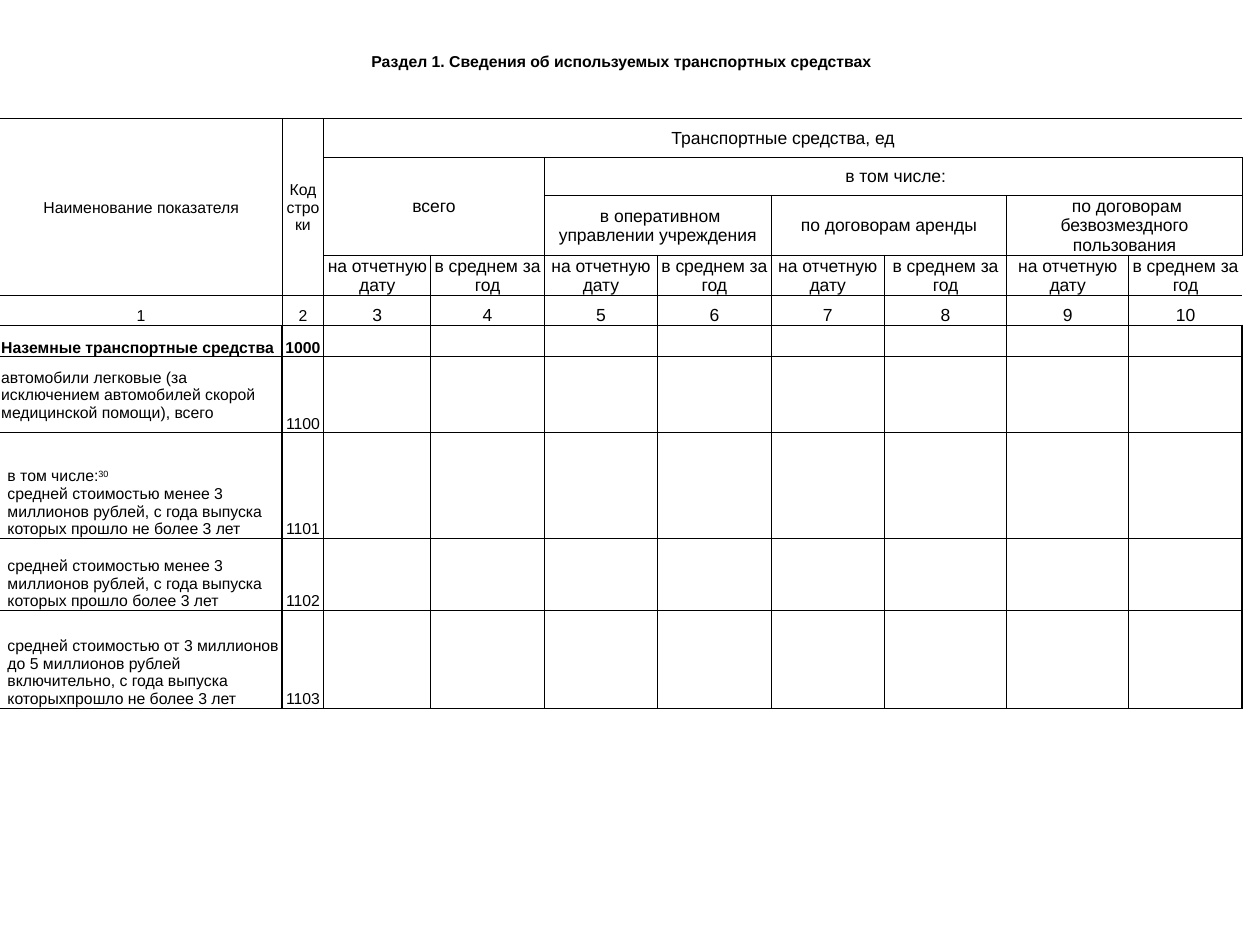
from lxml.etree import SubElement
from pptx import Presentation
from pptx.dml.color import RGBColor as RGB
from pptx.enum.text import MSO_ANCHOR as ANCHOR, PP_ALIGN as ALIGN
from pptx.oxml.ns import qn
from pptx.util import Pt

COLS = [120.24, 41.04, 23.76, 61.2] + [64.8] * 4 + [69.84] * 2 + [64.8]
ROWS = [28.8, 18, 22.3, 21.6, 22.3, 22.3, 17.1, 18, 43.4, 60.3, 41, 56]
NUMBERS, BODY, LAST = 6, 7, len(COLS)
PLAIN_STYLE = "{2D5ABB26-0587-4C30-8999-92F81FD0307C}"


def color(hex_string):
    return RGB.from_string(hex_string)


class Deck:
    font, ink, paper = "Arial", "000000", "FFFFFF"

    def __init__(self, prs):
        self.s = prs.slides.add_slide(prs.slide_layouts[6])

    def table(self, x, y, cols, rows):
        frame = self.s.shapes.add_table(len(rows), len(cols), Pt(x), Pt(y),
                                        Pt(sum(cols)), Pt(sum(rows)))
        table = frame.table
        table.first_row = table.horz_banding = False
        table._tbl.tblPr.find(qn("a:tableStyleId")).text = PLAIN_STYLE
        for col, width in zip(table.columns, cols):
            col.width = Pt(width)
        for row, height in zip(table.rows, rows):
            row.height = Pt(height)
        return table

    def cell(self, cell, borders, runs=(), size=9, bold=False,
             align=ALIGN.CENTER, anchor=ANCHOR.MIDDLE, indent=0.7):
        cell.margin_left, cell.margin_right = Pt(indent), Pt(0.7)
        cell.margin_top, cell.margin_bottom = Pt(0.7), 0
        cell.vertical_anchor = anchor
        for side, weight in zip("LRTB", borders):
            self.border(cell, side, weight)
        cell.fill.solid()
        cell.fill.fore_color.rgb = color(self.paper)
        p = cell.text_frame.paragraphs[0]
        p.alignment = align
        for text, *raised in runs:
            if text == "\n":
                p.add_line_break()
                continue
            r = p.add_run()
            r.text = text
            r.font.name, r.font.size, r.font.bold = self.font, Pt(size), bold
            r.font.color.rgb = color(self.ink)
            if raised:
                r.font._element.set("baseline", "30000")
        if not runs:
            SubElement(p._p, qn("a:endParaRPr"), sz=str(size * 100))

    def border(self, cell, side, weight):
        ln = SubElement(cell._tc.get_or_add_tcPr(), qn(f"a:ln{side}"),
                        w=str(Pt(weight)))
        if weight:
            fill = SubElement(ln, qn("a:solidFill"))
            SubElement(fill, qn("a:srgbClr"), val=self.ink)
        else:
            SubElement(ln, qn("a:noFill"))


def borders(row, col, width):
    """Weights of the left, right, top and bottom edges of a cell."""
    end = col + width
    if row == 0:
        return 0, 0, 0, 0
    if row == 1:
        return 0, 0, 0, 0.5

    def upright(edge):
        if edge == 0 or (edge == LAST and row in (2, 5, NUMBERS)):
            return 0
        return 1 if row >= BODY and edge in (2, LAST) else 0.5

    def level(edge):
        return 1 if edge == BODY and col >= 2 else 0.5

    bottom = row + (4 if row == 2 and col < 3 else 1)
    return upright(col), upright(end), level(row), level(bottom)


def main():
    prs = Presentation()
    prs.slide_width, prs.slide_height = Pt(720), Pt(540)
    deck = Deck(prs)
    table = deck.table(0, 20.88, COLS, ROWS)

    def put(row, col, text="", height=1, width=1, **style):
        cell = table.cell(row, col)
        if height * width > 1:
            cell.merge(table.cell(row + height - 1, col + width - 1))
        runs = [(text,)] if isinstance(text, str) and text else text
        deck.cell(cell, borders(row, col, width), runs, **style)

    # Heading row and the gap below it
    put(0, 0, "Раздел 1. Сведения об используемых транспортных средствах",
        width=LAST, bold=True)
    for col in range(LAST):
        put(1, col)

    # Column headers
    put(2, 0, "Наименование показателя", 4, 2)
    put(2, 2, "Код строки", 4)
    for row, col, text, height, width in [
            (2, 3, "Транспортные средства, ед", 1, 8),
            (3, 3, "всего", 2, 2),
            (3, 5, " в том числе:", 1, 6),
            (4, 5, " в оперативном управлении учреждения", 1, 2),
            (4, 7, "по договорам аренды", 1, 2),
            (4, 9, " по договорам безвозмездного пользования", 1, 2)]:
        put(row, col, text, height, width, size=10)
    for col in range(3, LAST):
        put(5, col, "на отчетную дату" if col % 2 else "в среднем за год",
            size=10)

    # Column numbers
    put(NUMBERS, 0, "1", width=2, anchor=ANCHOR.BOTTOM)
    for col in range(2, LAST):
        put(NUMBERS, col, str(col), size=9 if col == 2 else 10,
            anchor=ANCHOR.BOTTOM)

    # Indicators with empty value cells
    indicators = [
        ("1000", "Наземные транспортные средства"),
        ("1100", "автомобили легковые (за исключением автомобилей скорой "
                 "медицинской помощи), всего"),
        ("1101", [("в том числе:",), ("30", True), ("\n",),
                  ("средней стоимостью менее 3 миллионов рублей, с года "
                   "выпуска которых прошло не более 3 лет",)]),
        ("1102", "средней стоимостью менее 3 миллионов рублей, с года "
                 "выпуска которых прошло более 3 лет"),
        ("1103", "средней стоимостью от 3 миллионов до 5 миллионов рублей "
                 "включительно, с года выпуска которыхпрошло не более 3 лет"),
    ]
    for row, (code, name) in enumerate(indicators, BODY):
        bold = code == "1000"
        put(row, 0, name, width=2, bold=bold, align=ALIGN.LEFT,
            anchor=ANCHOR.MIDDLE if code == "1100" else ANCHOR.BOTTOM,
            indent=4.3 if code > "1100" else 0.7)
        put(row, 2, code, bold=bold, anchor=ANCHOR.BOTTOM)
        for col in range(3, LAST):
            put(row, col)

    prs.save("out.pptx")


if __name__ == "__main__":
    main()
